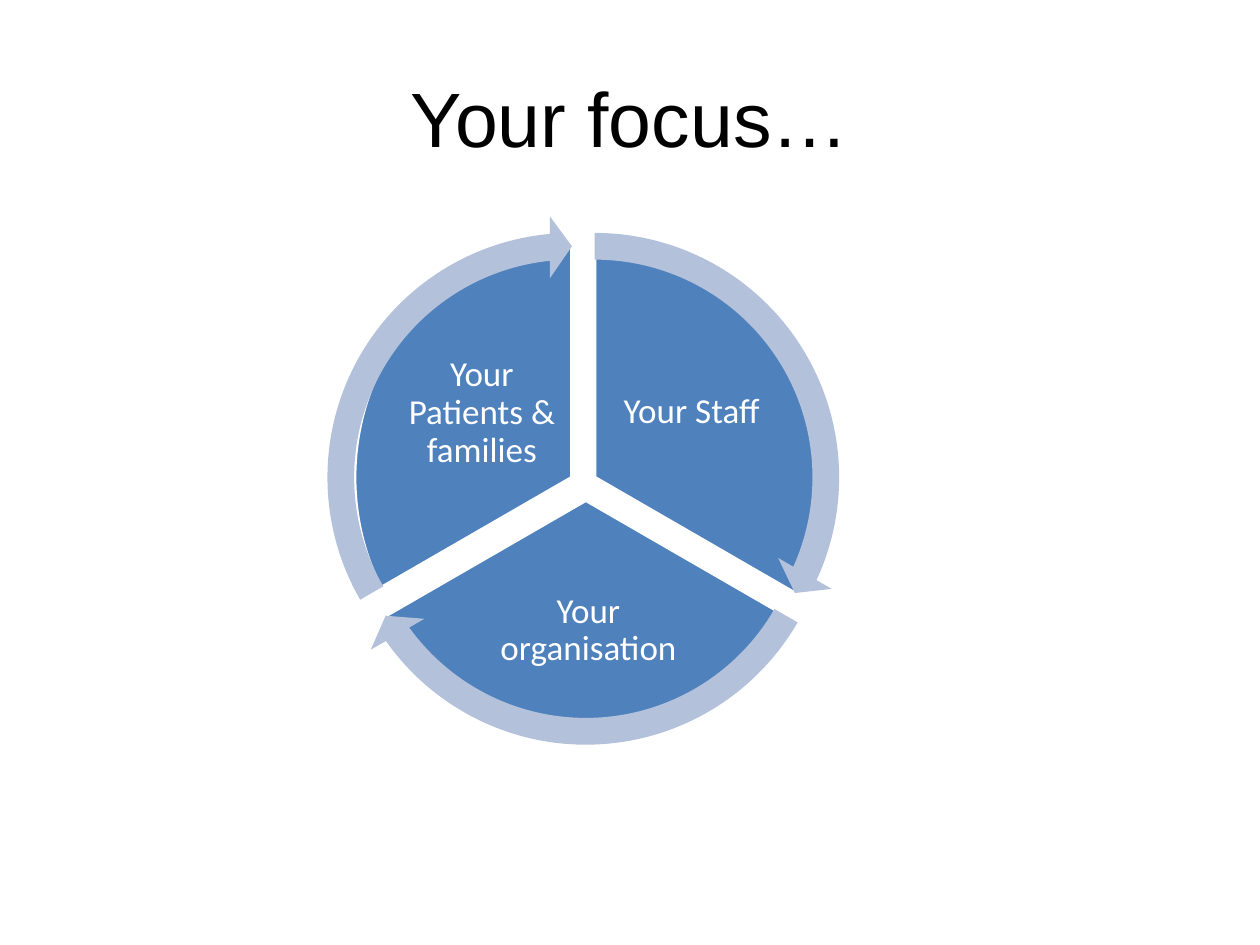
import pptx
import pptx.util
import pptx.dml.color
import pptx.enum.shapes
import pptx.enum.text

COLORS = {"black": "000000", "white": "FFFFFF", "wedge": "4F81BD", "arrow": "B3C1DB"}
SHAPE = pptx.enum.shapes.MSO_SHAPE
COLS, ROWS = 100, 75
ANGLE_UNIT = 0.6
SWEEP = 120
HEAD_GAP = 5.46
PIE_SIZE, ARROW_SIZE = 37, 41.6

SECTORS = [
    {"text": "Your Staff", "start": 270, "center": (22.6, 20.8),
     "pie_width": PIE_SIZE, "label": (23.7, 10.1, 13.2, 11)},
    {"text": "Your organisation", "start": 30, "center": (21.9, 22.6),
     "pie_width": PIE_SIZE, "label": (12.2, 28.1, 19.8, 9.7)},
    {"text": "Your Patients & families", "start": 150, "center": (20.8, 20.8),
     "pie_width": 34.5, "label": (7.5, 10.2, 12.3, 11)},
]


def rgb(name):
    return pptx.dml.color.RGBColor.from_string(COLORS[name])


def add_text(tf, text, font, size, color):
    tf.word_wrap = True
    tf.vertical_anchor = pptx.enum.text.MSO_ANCHOR.MIDDLE
    p = tf.paragraphs[0]
    p.alignment = pptx.enum.text.PP_ALIGN.CENTER
    r = p.add_run()
    r.text = text
    r.font.name = font
    r.font.size = pptx.util.Pt(size)
    r.font.color.rgb = rgb(color)
    return p


def add_title(s, box):
    title = s.shapes.title
    title.left, title.top, title.width, title.height = box
    add_text(title.text_frame, "Your focus…", "Arial", 44, "black")


def add_ring_part(shapes, kind, box, adjustments, color):
    sp = shapes.add_shape(kind, *box)
    sp.shadow.inherit = False
    for i, value in enumerate(adjustments):
        sp.adjustments[i] = value
    sp.fill.solid()
    sp.fill.fore_color.rgb = rgb(color)
    sp.line.fill.background()
    return sp


def add_label(shapes, box, text):
    tf = shapes.add_textbox(*box).text_frame
    inset = pptx.util.Inches(0.03)
    tf.margin_left = tf.margin_right = tf.margin_top = tf.margin_bottom = inset
    p = add_text(tf, text, "Calibri", 20, "white")
    p.line_spacing = 0.9


def add_cycle(s, left, top, cell):
    shapes = s.shapes.add_group_shape().shapes

    def place(x, y, w, h):
        return left + int(x * cell), top + int(y * cell), int(w * cell), int(h * cell)

    def centered(center, w, h):
        return place(center[0] - w / 2, center[1] - h / 2, w, h)

    for sector in SECTORS:
        start = sector["start"]
        end = (start + SWEEP) % 360
        pie = add_ring_part(
            shapes, SHAPE.PIE, centered(sector["center"], sector["pie_width"], PIE_SIZE),
            [start * ANGLE_UNIT, end * ANGLE_UNIT], "wedge")
        pie.line.color.rgb = rgb("white")
        pie.line.width = pptx.util.Pt(2)
        add_label(shapes, place(*sector["label"]), sector["text"])

    for sector in SECTORS:
        start = sector["start"]
        end = (start + SWEEP) % 360 - HEAD_GAP
        add_ring_part(
            shapes, SHAPE.CIRCULAR_ARROW, centered(sector["center"], ARROW_SIZE, ARROW_SIZE),
            [0.051, HEAD_GAP * ANGLE_UNIT, end * ANGLE_UNIT, start * ANGLE_UNIT, 0.059], "arrow")


def main():
    prs = pptx.Presentation()
    prs.slide_width = pptx.util.Inches(10)
    prs.slide_height = pptx.util.Inches(7.5)
    col, row = prs.slide_width // COLS, prs.slide_height // ROWS
    s = prs.slides.add_slide(prs.slide_layouts[5])
    s.background.fill.solid()
    s.background.fill.fore_color.rgb = rgb("white")
    add_title(s, (5 * col, 3 * row, 90 * col, int(12.5 * row)))
    add_cycle(s, int(24.6 * col), int(17.1 * row), col)
    prs.save("out.pptx")


if __name__ == "__main__":
    main()
